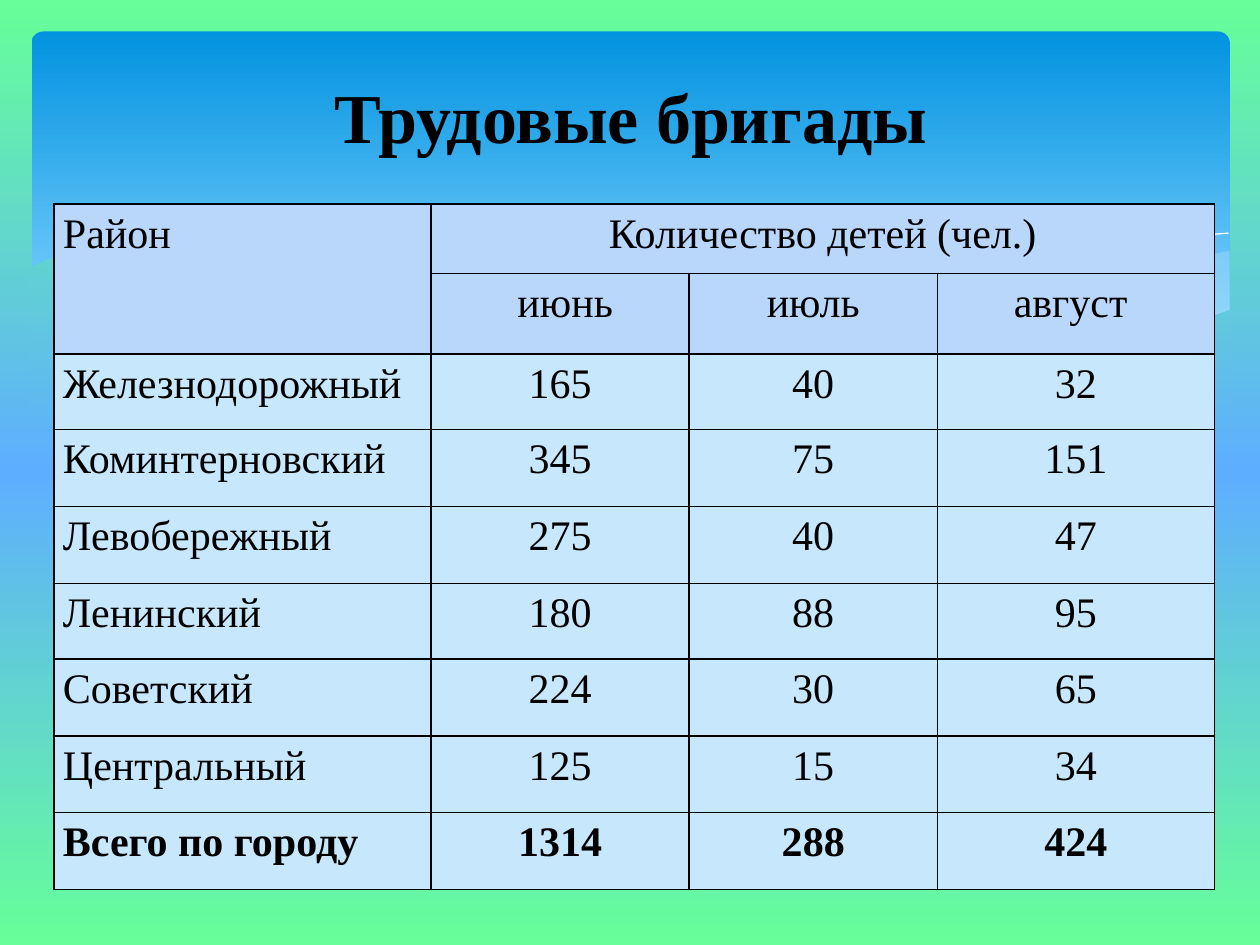
from lxml import etree
from pptx import Presentation
from pptx.dml.color import RGBColor
from pptx.enum.shapes import MSO_SHAPE
from pptx.enum.text import MSO_ANCHOR, PP_ALIGN
from pptx.oxml.ns import qn
from pptx.util import Inches, Pt

ROUNDED = MSO_SHAPE.ROUNDED_RECTANGLE
MIDDLE = MSO_ANCHOR.MIDDLE
LEFT, CENTER = PP_ALIGN.LEFT, PP_ALIGN.CENTER

# Content
TITLE = "Трудовые бригады"
ROWS = [
    ("Район", "Количество детей (чел.)", "", ""),
    ("", " июнь", "июль", "август "),
    ("Железнодорожный", "165", "40", "32"),
    ("Коминтерновский", "345", "75", "151"),
    ("Левобережный", "275", "40", "47"),
    ("Ленинский", "180", "88", "95"),
    ("Советский", "224", "30", "65"),
    ("Центральный", "125", "15", "34"),
    ("Всего по городу", "1314", "288", "424"),
]
HEADER_ROWS = 2
COLUMN_WIDTHS = (2.99, 2.05, 1.97, 2.2)
ROW_HEIGHTS = (0.55, 0.64, 0.6, 0.61, 0.61, 0.6, 0.61, 0.61, 0.61)

THEME = {
    "font": "Times New Roman", "title": 40, "body": 24,
    "text": "000000", "border": "000000", "line": "FFFFFF",
    "edge": "66FF99", "middle": "5EAEFF",
    "panel": [(0, "0293E0"), (90, "83D3FE")],
    "wave": "C6E7FC", "header": "B9D6FB", "cell": "C6E7FC",
}

# Wave outlines in inches
RIGHT_WAVE = [
    (9.76, 1.99), (9.35, 2.07), (8.61, 2.23), (7.79, 2.42), (7.06, 2.57),
    (6.61, 2.65), (7.05, 2.71), (7.57, 2.76), (8.14, 2.78), (8.63, 2.75),
    (9.05, 2.69), (9.42, 2.59), (9.76, 2.47),
]
MIDDLE_WAVE = [
    (8.93, 2.73), (8.37, 2.65), (7.75, 2.54), (7.06, 2.4), (6.29, 2.22),
    (5.69, 2.08), (5.14, 1.98), (4.42, 1.89), (3.8, 1.86), (3.28, 1.87),
    (2.86, 1.91), (3.42, 1.99), (4.04, 2.11), (4.91, 2.32), (5.66, 2.48),
    (6.34, 2.61), (6.95, 2.7), (7.48, 2.76), (7.96, 2.78), (8.48, 2.77),
]
FALLING_LINE = [
    (3.09, 1.95), (3.44, 1.9), (4.01, 1.87), (4.69, 1.89), (5.33, 1.94),
    (6.08, 2.04), (6.95, 2.19), (7.6, 2.33), (8.31, 2.51), (9.07, 2.72),
]
RISING_LINE = [
    (6.13, 2.57), (6.72, 2.41), (7.48, 2.23), (8.36, 2.04), (8.95, 1.94),
    (9.38, 1.88), (9.75, 1.85),
]
FOREGROUND = [
    (9.77, 2.46), (9.4, 2.59), (8.99, 2.69), (8.5, 2.75), (8.09, 2.77),
    (7.44, 2.74), (6.88, 2.68), (6.26, 2.58), (5.55, 2.45), (4.47, 2.2),
    (3.65, 2.02), (2.92, 1.91), (2.3, 1.85), (1.77, 1.84), (1.32, 1.87),
    (0.85, 1.93), (0.52, 2.01), (0.36, 2.07), (0.23, 2.13),
    (0.23, 3.29), (9.77, 3.29),
]


def color(value):
    return RGBColor.from_string(value)


def fill_gradient(fill, element, stops):
    """Top-to-bottom gradient with any number of stops."""
    fill.gradient()
    fill.gradient_angle = 270
    stop_list = next(element.iter(qn("a:gsLst")))
    for stop in list(stop_list):
        stop_list.remove(stop)
    for position, value in stops:
        stop = etree.SubElement(stop_list, qn("a:gs"), pos=str(position * 1000))
        etree.SubElement(stop, qn("a:srgbClr"), val=value)


def background_color(y, height):
    """Colour of the slide background at height y."""
    weight = 1 - abs(2 * y / height - 1)
    pairs = zip(color(THEME["edge"]), color(THEME["middle"]))
    return str(RGBColor(*(round(a + (b - a) * weight) for a, b in pairs)))


def add_outline(slide, points, closed=True):
    scaled = [(x * 100, y * 100) for x, y in points]
    builder = slide.shapes.build_freeform(*scaled[0], scale=Inches(0.01))
    builder.add_line_segments(scaled[1:], close=closed)
    shape = builder.convert_to_shape()
    shape.shadow.inherit = False
    shape.line.fill.background()
    return shape


def add_backdrop(slide):
    edge, middle = THEME["edge"], THEME["middle"]
    fill_gradient(slide.background.fill, slide.element,
                  [(0, edge), (50, middle), (100, edge)])
    panel = slide.shapes.add_shape(
        ROUNDED, Inches(0.25), Inches(0.25), Inches(9.51), Inches(2.7))
    panel.adjustments[0] = 0.034
    panel.shadow.inherit = False
    panel.line.fill.background()
    fill_gradient(panel.fill, panel.element, THEME["panel"])

    for points, opacity in ((RIGHT_WAVE, 29), (MIDDLE_WAVE, 40)):
        wave = add_outline(slide, points)
        wave.fill.solid()
        wave.fill.fore_color.rgb = color(THEME["wave"])
        value = next(wave.element.iter(qn("a:srgbClr")))
        etree.SubElement(value, qn("a:alpha"), val=str(opacity * 1000))
    for points in (FALLING_LINE, RISING_LINE):
        curve = add_outline(slide, points, closed=False)
        curve.fill.background()
        curve.line.color.rgb = color(THEME["line"])
        curve.line.width = Pt(0)

    # The foreground continues the slide background
    foreground = add_outline(slide, FOREGROUND)
    fill_gradient(foreground.fill, foreground.element,
                  [(0, background_color(1.84, 7.5)),
                   (100, background_color(3.29, 7.5))])


def format_text(paragraph, size, bold, alignment):
    paragraph.alignment = alignment
    for run in paragraph.runs:
        run.font.name = THEME["font"]
        run.font.size = Pt(size)
        run.font.bold = bold
        run.font.color.rgb = color(THEME["text"])


def add_title(slide):
    title = slide.shapes.title
    title.left, title.top = Inches(0.51), Inches(0.37)
    title.width, title.height = Inches(8.99), Inches(1.1)
    title.text_frame.text = TITLE
    title.text_frame.vertical_anchor = MIDDLE
    format_text(title.text_frame.paragraphs[0], THEME["title"], True, CENTER)
    slide.shapes.element.append(title.element)  # bring to front


def add_borders(cell):
    properties = cell._tc.get_or_add_tcPr()
    for side in ("lnL", "lnR", "lnT", "lnB"):
        line = etree.SubElement(properties, qn(f"a:{side}"), w=str(Pt(1)))
        fill = etree.SubElement(line, qn("a:solidFill"))
        etree.SubElement(fill, qn("a:srgbClr"), val=THEME["border"])


def add_table(slide):
    table = slide.shapes.add_table(
        len(ROWS), len(COLUMN_WIDTHS), Inches(0.43), Inches(1.62),
        Inches(sum(COLUMN_WIDTHS)), Inches(sum(ROW_HEIGHTS))).table
    for column, width in zip(table.columns, COLUMN_WIDTHS):
        column.width = Inches(width)
    for row, height in zip(table.rows, ROW_HEIGHTS):
        row.height = Inches(height)

    for i, values in enumerate(ROWS):
        for j, value in enumerate(values):
            cell = table.cell(i, j)
            cell.margin_left = cell.margin_right = Inches(0.07)
            cell.margin_top = cell.margin_bottom = 0
            add_borders(cell)
            cell.fill.solid()
            cell.fill.fore_color.rgb = color(
                THEME["header" if i < HEADER_ROWS else "cell"])
            paragraph = cell.text_frame.paragraphs[0]
            paragraph.text = value
            paragraph.line_spacing = 1.15
            paragraph.space_after = Pt(10 if j < 2 else 0)
            format_text(paragraph, THEME["body"], i == len(ROWS) - 1,
                        CENTER if j else LEFT)
    table.cell(0, 0).merge(table.cell(1, 0))
    table.cell(0, 1).merge(table.cell(0, 3))


def main():
    presentation = Presentation()
    presentation.slide_width, presentation.slide_height = Inches(10), Inches(7.5)
    slide = presentation.slides.add_slide(presentation.slide_layouts[5])
    add_backdrop(slide)
    add_title(slide)
    add_table(slide)
    presentation.save("out.pptx")


if __name__ == "__main__":
    main()
